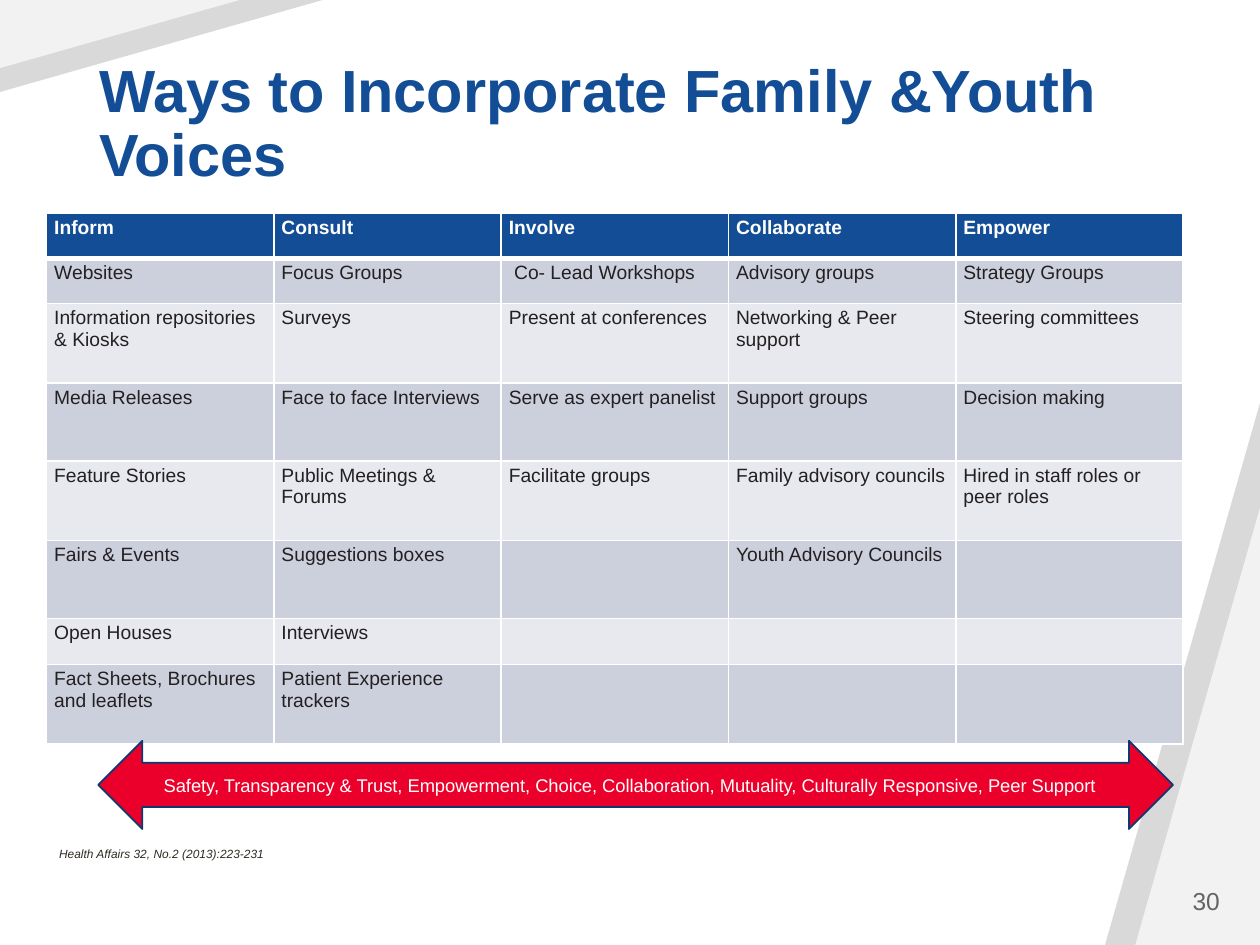
from dataclasses import dataclass

from lxml import etree
from pptx import Presentation
from pptx.dml.color import RGBColor
from pptx.enum import shapes, text
from pptx.oxml import ns
from pptx.util import Inches, Pt

BLUE, WHITE, GREY, PALE = "124D95", "FFFFFF", "D9D9D9", "F2F2F2"
INK, BANDS = "242021", ("CCD0DD", "E7E9EF")
KIND = shapes.MSO_SHAPE
ALIGN = text.PP_ALIGN
ANCHOR = text.MSO_ANCHOR


@dataclass
class Box:
    x: float
    y: float
    w: float
    h: float

    def emu(self) -> list:
        return [Inches(v) for v in (self.x, self.y, self.w, self.h)]


@dataclass
class Wedge:
    box: Box
    color: str
    turn: int = 0


@dataclass
class Label:
    words: str
    box: Box
    size: float
    color: str
    align: ALIGN = ALIGN.LEFT
    anchor: ANCHOR = ANCHOR.TOP
    bold: bool = False
    italic: bool = False
    space: float = 1.0


WEDGES = [
    Wedge(Box(8.77, 3.2, 1.23, 4.3), GREY),
    Wedge(Box(9.01, 4.03, 0.99, 3.47), PALE),
    Wedge(Box(0, 0, 2.56, 0.73), GREY, 180),
    Wedge(Box(0, 0, 1.9, 0.54), PALE, 180),
]

LABELS = [
    Label("Ways to Incorporate Family &Youth Voices", Box(0.69, 0.4, 8.7, 1.15),
          34, BLUE, anchor=ANCHOR.BOTTOM, bold=True, space=0.9),
    Label("Health Affairs 32, No.2 (2013):223-231", Box(0.37, 6.67, 3.28, 0.21),
          6.8, "2E2B21", italic=True),
    Label("30", Box(8.96, 6.95, 0.82, 0.4), 14, "646464",
          ALIGN.RIGHT, ANCHOR.MIDDLE),
]

GRID = Box(0.37, 1.69, 9.02, 4.21)
TALL, LOW = 0.63, 0.36
HEIGHTS = [LOW, LOW, TALL, 0.62, TALL, 0.62, LOW, TALL]
ROWS = [
    ["Inform", "Consult", "Involve", "Collaborate", "Empower"],
    ["Websites", "Focus Groups", " Co- Lead Workshops", "Advisory groups",
     "Strategy Groups"],
    ["Information repositories & Kiosks", "Surveys", "Present at conferences",
     "Networking & Peer support", "Steering committees"],
    ["Media Releases", "Face to face Interviews", "Serve as expert panelist",
     "Support groups", "Decision making"],
    ["Feature Stories", "Public Meetings & Forums", "Facilitate groups",
     "Family advisory councils", "Hired in staff roles or peer roles"],
    ["Fairs & Events", "Suggestions boxes", "", "Youth Advisory Councils", ""],
    ["Open Houses", "Interviews", "", "", ""],
    ["Fact Sheets, Brochures and leaflets", "Patient Experience trackers",
     "", "", ""],
]

VALUES = Box(0.78, 5.88, 8.53, 0.7)
VALUE_TEXT = ("Safety, Transparency & Trust, Empowerment, Choice, Collaboration, "
              "Mutuality, Culturally Responsive, Peer Support")


def rgb(code: str) -> RGBColor:
    return RGBColor.from_string(code)


def paint(part, code: str) -> None:
    part.fill.solid()
    part.fill.fore_color.rgb = rgb(code)


def assign(item, values: dict) -> None:
    for name, value in values.items():
        setattr(item, name, value)


def write(para, words: str, size: float, color: str,
          bold: bool = False, italic: bool = False) -> None:
    run = para.add_run()
    run.text = words
    assign(run.font, {"name": "Arial", "size": Pt(size), "bold": bold,
                      "italic": italic})
    run.font.color.rgb = rgb(color)


def add_wedge(slide, wedge: Wedge) -> None:
    shape = slide.shapes.add_shape(KIND.ISOSCELES_TRIANGLE, *wedge.box.emu())
    shape.adjustments[0] = 1
    shape.rotation = wedge.turn
    shape.shadow.inherit = False
    paint(shape, wedge.color)
    shape.line.fill.background()


def add_label(slide, label: Label) -> None:
    frame = slide.shapes.add_textbox(*label.box.emu()).text_frame
    assign(frame, {"word_wrap": True, "vertical_anchor": label.anchor})
    para = frame.paragraphs[0]
    assign(para, {"alignment": label.align, "line_spacing": label.space})
    write(para, label.words, label.size, label.color, label.bold, label.italic)


def edge(cell, row: int) -> None:
    """Give a cell white borders, thick between the header and the body."""
    props = cell._tc.get_or_add_tcPr()
    thick = {(0, "B"), (1, "T")}
    for spot, side in enumerate("LRTB"):
        width = Pt(3 if (row, side) in thick else 1)
        line = etree.Element(ns.qn(f"a:ln{side}"), w=str(width))
        fill = etree.SubElement(line, ns.qn("a:solidFill"))
        etree.SubElement(fill, ns.qn("a:srgbClr"), val=WHITE)
        props.insert(spot, line)


def add_grid(slide) -> None:
    count = len(ROWS[0])
    table = slide.shapes.add_table(len(ROWS), count, *GRID.emu()).table
    for col in table.columns:
        col.width = Inches(GRID.w / count)
    for r, (words, height) in enumerate(zip(ROWS, HEIGHTS)):
        table.rows[r].height = Inches(height)
        head = r == 0
        for c, word in enumerate(words):
            cell = table.cell(r, c)
            assign(cell, {"margin_left": Inches(0.06), "margin_right": Inches(0.06),
                          "margin_top": Inches(0.03), "margin_bottom": Inches(0.03)})
            paint(cell, BLUE if head else BANDS[(r - 1) % 2])
            edge(cell, r)
            if word:
                write(cell.text_frame.paragraphs[0], word, 11,
                      WHITE if head else INK, bold=head)


def add_values(slide) -> None:
    arrow = slide.shapes.add_shape(KIND.LEFT_RIGHT_ARROW, *VALUES.emu())
    arrow.shadow.inherit = False
    paint(arrow, "EA002A")
    arrow.line.color.rgb = rgb("0D396E")
    arrow.line.width = Pt(1)
    frame = arrow.text_frame
    assign(frame, {"word_wrap": True, "vertical_anchor": ANCHOR.MIDDLE,
                   "margin_right": Inches(0.18)})
    para = frame.paragraphs[0]
    para.alignment = ALIGN.CENTER
    write(para, VALUE_TEXT, 10.5, WHITE)


def main() -> None:
    deck = Presentation()
    assign(deck, {"slide_width": Inches(10), "slide_height": Inches(7.5)})
    slide = deck.slides.add_slide(deck.slide_layouts[6])
    for wedge in WEDGES:
        add_wedge(slide, wedge)
    add_grid(slide)
    add_values(slide)
    for label in LABELS:
        add_label(slide, label)
    deck.save("out.pptx")


if __name__ == "__main__":
    main()
